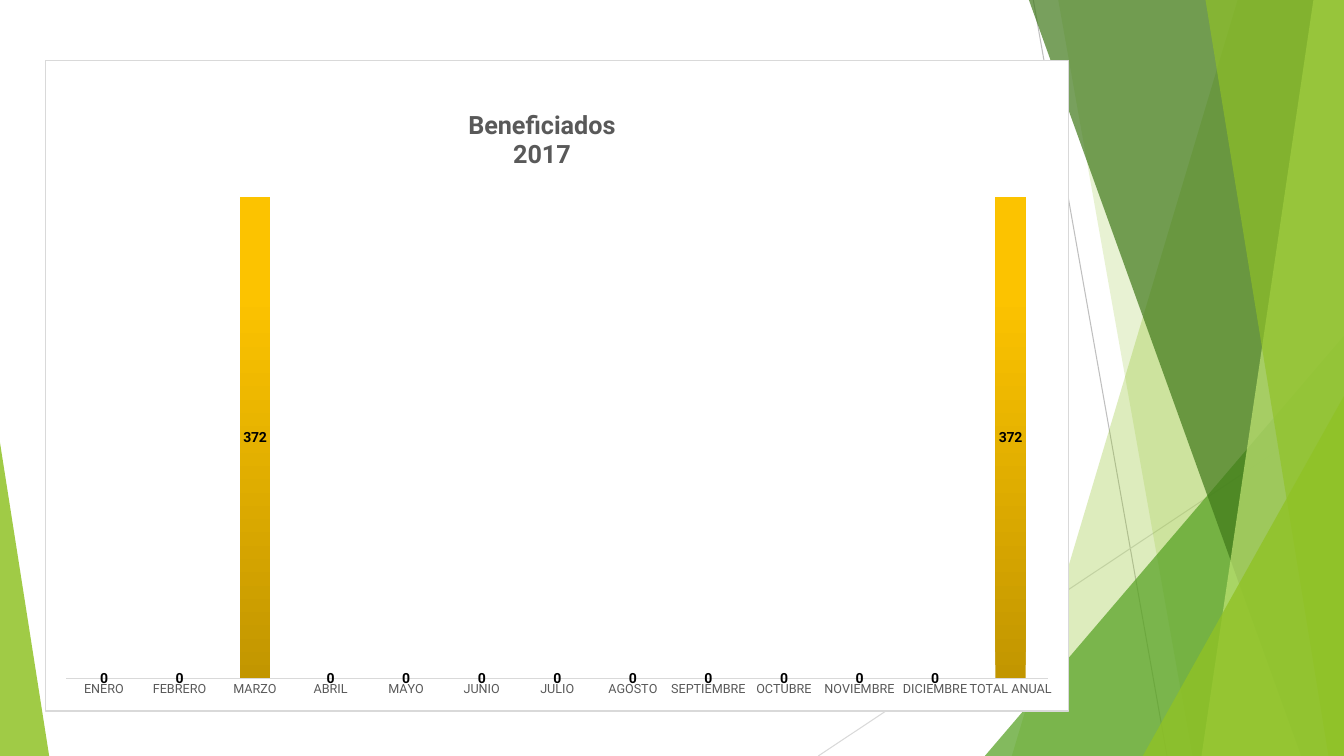
"""Build a slide with a yearly column chart over green facets."""
from lxml import etree
from pptx import Presentation
from pptx.chart.data import CategoryChartData
from pptx.dml.color import RGBColor
from pptx.enum.chart import XL_CHART_TYPE, XL_LABEL_POSITION, XL_TICK_MARK
from pptx.enum.shapes import MSO_CONNECTOR, MSO_SHAPE
from pptx.oxml import parse_xml
from pptx.oxml.ns import nsdecls, qn
from pptx.util import Cm, Pt

STACKED = XL_CHART_TYPE.COLUMN_STACKED
CENTER = XL_LABEL_POSITION.CENTER
NO_TICK = XL_TICK_MARK.NONE
STRAIGHT = MSO_CONNECTOR.STRAIGHT
TRIANGLE = MSO_SHAPE.ISOSCELES_TRIANGLE

WIDTH, HEIGHT = 33.87, 19.05
FONT = "Roboto"
GREEN = "90C226"
GRAY = "D9D9D9"
DARK = "595959"
MONTHS = ["ENERO", "FEBRERO", "MARZO", "ABRIL", "MAYO", "JUNIO", "JULIO",
          "AGOSTO", "SEPTIEMBRE", "OCTUBRE", "NOVIEMBRE", "DICIEMBRE"]
COUNTS = [0, 0, 372] + [0] * 9


def color(code):
    return RGBColor.from_string(code)


def paint(shape, code, alpha):
    shape.shadow.inherit = False
    shape.line.fill.background()
    shape.fill.solid()
    shape.fill.fore_color.rgb = color(code)
    tone = shape.fill._xPr.find(".//" + qn("a:srgbClr"))
    etree.SubElement(tone, qn("a:alpha"), val=str(alpha * 1000))


def add_line(slide, start, end, code):
    line = slide.shapes.add_connector(
        STRAIGHT, *(Cm(value) for value in start + end))
    line.line.color.rgb = color(code)
    line.line.width = Pt(0.75)
    etree.SubElement(line._element.spPr, qn("a:effectLst"))


def add_facet(slide, top, bottom, code, alpha):
    points = [(top, 0), (WIDTH, 0), (WIDTH, HEIGHT), (bottom, HEIGHT)]
    points = [(Cm(x), Cm(y)) for x, y in points]
    outline = slide.shapes.build_freeform(*points[0])
    outline.add_line_segments(points[1:])
    paint(outline.convert_to_shape(), code, alpha)


def add_corner(slide, left, top, right, peak, code, alpha):
    shape = slide.shapes.add_shape(
        TRIANGLE, Cm(left), Cm(top), Cm(right - left), Cm(HEIGHT - top))
    shape.adjustments[0] = peak
    paint(shape, code, alpha)


def set_font(font, size, code, bold=False):
    font.name = FONT
    font.size = Pt(size)
    font.bold = bold
    font.color.rgb = color(code)


def make_layout(target="", **place):
    """Return a manual chart layout with places as shares of the chart."""
    inner = f'<c:layoutTarget val="{target}"/>' if target else ""
    modes = '<c:xMode val="edge"/><c:yMode val="edge"/>'
    sizes = "".join(f'<c:{key} val="{val}"/>' for key, val in place.items())
    return parse_xml(f'<c:layout {nsdecls("c")}><c:manualLayout>{inner}{modes}'
                     f'{sizes}</c:manualLayout></c:layout>')


def set_layout(parent, layout, before):
    old = parent.find(qn("c:layout"))
    if old is not None:
        parent.remove(old)
    parent.insert(before, layout)


def frame_chart(chart):
    frame = parse_xml(
        f'<c:spPr {nsdecls("c", "a")}>'
        '<a:solidFill><a:srgbClr val="FFFFFF"/></a:solidFill>'
        f'<a:ln w="{Pt(0.75)}"><a:solidFill><a:srgbClr val="{GRAY}"/>'
        '</a:solidFill></a:ln></c:spPr>')
    chart.element.find(qn("c:chart")).addnext(frame)


def style_title(chart):
    text = chart.chart_title.text_frame
    text.text = "Beneficiados\n2017"
    for line in text.paragraphs:
        set_font(line.font, 18, DARK, True)
    chart.chart_title.include_in_layout = False
    title = chart.element.find(".//" + qn("c:title"))
    set_layout(title, make_layout(x=0.41, y=0.07), 1)


def style_axes(chart):
    axis = chart.category_axis
    axis.major_tick_mark = NO_TICK
    axis.format.line.color.rgb = color(GRAY)
    axis.format.line.width = Pt(1)
    set_font(axis.tick_labels.font, 9, DARK)
    scale = chart.value_axis
    scale.minimum_scale = 0
    scale.maximum_scale = max(COUNTS)
    scale.has_major_gridlines = False
    scale.visible = False


def style_bars(plot):
    plot.gap_width = 150
    plot.overlap = 100
    plot.vary_by_categories = False
    fill = plot.series[0].format.fill
    fill.gradient()
    fill.gradient_angle = 90
    tones = [(0, "C29600"), (0.8, "FCC300")]
    for stop, (place, code) in zip(fill.gradient_stops, tones):
        stop.position = place
        stop.color.rgb = color(code)
    labels = plot.series[0].data_labels
    labels.show_value = True
    labels.position = CENTER
    set_font(labels.font, 10, "000000", True)


def add_chart(slide):
    data = CategoryChartData()
    data.categories = MONTHS + ["TOTAL ANUAL"]
    data.add_series("Series 1", COUNTS + [sum(COUNTS)])
    chart = slide.shapes.add_chart(
        STACKED, Cm(1.14), Cm(1.52), Cm(25.81), Cm(16.41), data).chart
    set_font(chart.font, 10, "000000")
    chart.has_legend = False
    frame_chart(chart)
    style_title(chart)
    style_axes(chart)
    style_bars(chart.plots[0])
    area = chart.element.find(".//" + qn("c:plotArea"))
    set_layout(area, make_layout("inner", x=0.02, y=0.21, w=0.96, h=0.74), 0)


def main():
    deck = Presentation()
    deck.slide_width, deck.slide_height = Cm(WIDTH), Cm(HEIGHT)
    slide = deck.slides.add_slide(deck.slide_layouts[6])
    add_line(slide, (26.04, 0), (29.41, HEIGHT), "BFBFBF")
    add_line(slide, (WIDTH, 10.24), (20.62, HEIGHT), GRAY)
    add_facet(slide, 31.19, 25.5, GREEN, 30)
    add_facet(slide, 26.67, 30.05, GREEN, 20)
    add_corner(slide, 24.82, 8.46, WIDTH, 1, "54A021", 72)
    add_facet(slide, 25.93, 32.79, "3F7819", 70)
    add_facet(slide, 33.1, 30.28, "C0E474", 70)
    add_facet(slide, 30.38, 33.48, GREEN, 65)
    add_corner(slide, 28.8, 9.98, WIDTH, 1, GREEN, 80)
    add_corner(slide, 0, 11.15, 1.24, 0, GREEN, 85)
    add_chart(slide)
    deck.save("out.pptx")


if __name__ == "__main__":
    main()
